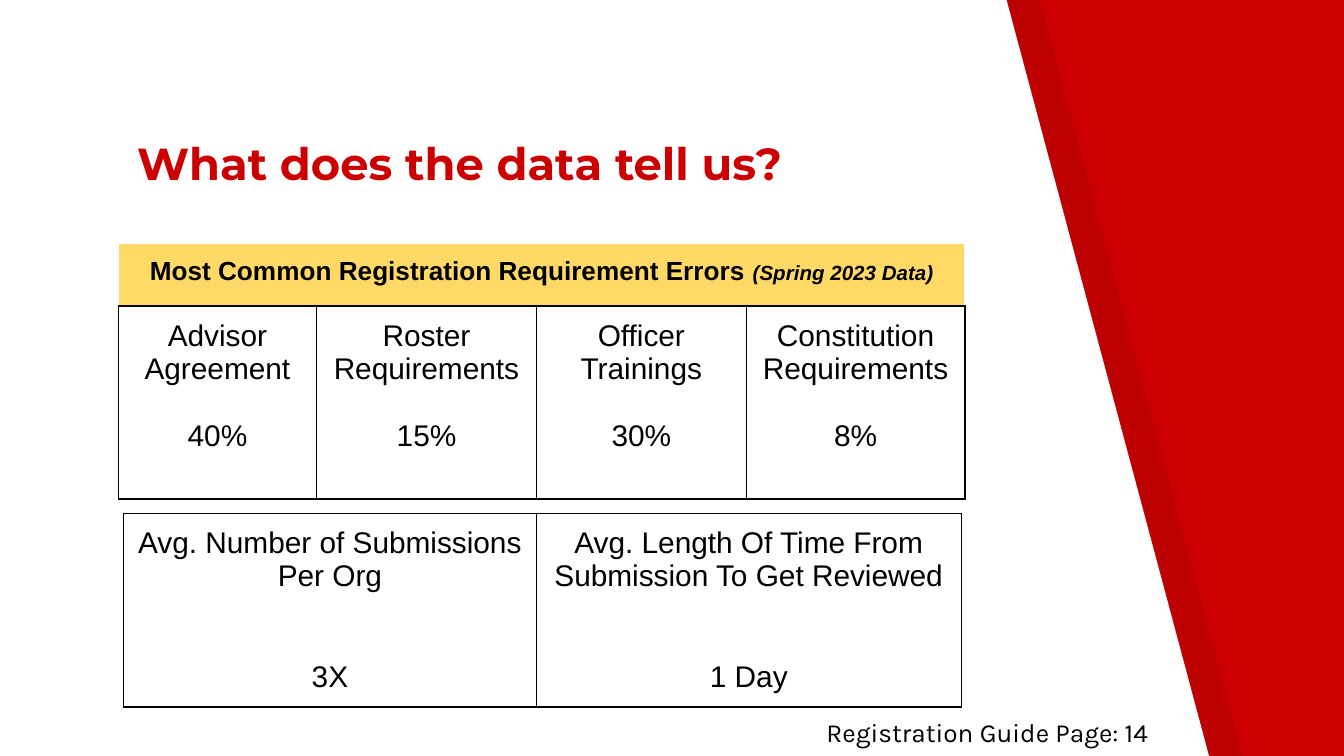
from pptx import Presentation
from pptx.dml.color import RGBColor as RGB
from pptx.enum.text import MSO_ANCHOR as Anchor, MSO_AUTO_SIZE as Fit, PP_ALIGN as Align
from pptx.oxml import parse_xml
from pptx.oxml.ns import nsdecls, qn
from pptx.util import Pt
from lxml.etree import SubElement as Sub

RED = RGB(0xCC, 0x00, 0x00)
GOLD = RGB(0xFF, 0xD9, 0x66)
WHITE = RGB(0xFF, 0xFF, 0xFF)
BLACK = RGB(0x00, 0x00, 0x00)
INSET = 7.2


def style(run, size, color=BLACK, face="Arial", bold=False, slant=False):
    font = run.font
    font.name, font.size = face, Pt(size)
    font.bold, font.italic = bold, slant
    font.color.rgb = color


def pad(part):
    part.margin_left = part.margin_right = Pt(INSET)
    part.margin_top = part.margin_bottom = Pt(INSET)


def panel(slide, box, color, alpha=None):
    left, top, width, height = box
    right, base = left + width, top + height
    pen = slide.shapes.build_freeform(Pt(left), Pt(top))
    pen.add_line_segments([(Pt(x), Pt(y)) for x, y in (
        (left, base), (right, base), (right - 108.72, 0))])
    shape = pen.convert_to_shape()
    shape.shadow.inherit = False
    shape.line.fill.background()
    shape.fill.solid()
    shape.fill.fore_color.rgb = color
    if alpha:
        tint = shape.fill._xPr.find(".//" + qn("a:srgbClr"))
        Sub(tint, qn("a:alpha")).set("val", str(alpha * 1000))


def title(slide, box, text):
    shape = slide.shapes.title
    slide.shapes._spTree.append(shape._element)
    shape.left, shape.top, shape.width, shape.height = map(Pt, box)
    frame = shape.text_frame
    frame.text = text
    frame.auto_size = Fit.NONE
    frame.vertical_anchor = Anchor.BOTTOM
    pad(frame)
    frame.paragraphs[0].alignment = Align.LEFT
    style(frame.paragraphs[0].runs[0], 24, RED, "Montserrat", True)


def edge(cell, sides, color):
    for side in sides:
        cell._tc.get_or_add_tcPr().append(parse_xml(
            f'<a:ln{side} {nsdecls("a")} w="9525"><a:solidFill>'
            f'<a:srgbClr val="{color}"/></a:solidFill></a:ln{side}>'))


def fact(cell, label, value, gap):
    pad(cell)
    frame = cell.text_frame
    frame.text = label
    last = frame.add_paragraph()
    last.text = value
    last.space_before = Pt(gap)
    for para in frame.paragraphs:
        para.alignment = Align.CENTER
        style(para.runs[0], 16)
    edge(cell, "LRTB", BLACK)
    cell.fill.background()


def header(table, parts):
    last = len(table.columns) - 1
    cell = table.cell(0, 0)
    cell.merge(table.cell(0, last))
    pad(cell)
    para = cell.text_frame.paragraphs[0]
    para.alignment = Align.CENTER
    for text, size, slant in parts:
        run = para.add_run()
        run.text = text
        style(run, size, bold=True, slant=slant)
    for col in range(last + 1):
        part = table.cell(0, col)
        edge(part, "LRT", WHITE)
        edge(part, "B", BLACK)
        part.fill.solid()
        part.fill.fore_color.rgb = GOLD


def grid(slide, spot, cols, rows, facts, gap, head=None):
    shape = slide.shapes.add_table(
        len(rows), len(cols), *map(Pt, (*spot, sum(cols), sum(rows))))
    table = shape.table
    table.first_row = table.horz_banding = False
    for col, width in zip(table.columns, cols):
        col.width = Pt(width)
    for row, height in zip(table.rows, rows):
        row.height = Pt(height)
    if head:
        header(table, head)
    for col, (label, value) in enumerate(facts):
        fact(table.cell(len(rows) - 1, col), label, value, gap)


def footer(slide, box, text):
    frame = slide.shapes.add_textbox(*map(Pt, box)).text_frame
    frame.word_wrap = True
    pad(frame)
    frame.text = text
    style(frame.paragraphs[0].runs[0], 14, face="Karla")


def main():
    deck = Presentation()
    deck.slide_width, deck.slide_height = Pt(720), Pt(405)
    slide = deck.slides.add_slide(deck.slide_layouts[5])
    back = slide.background.fill
    back.solid()
    back.fore_color.rgb = RED

    panel(slide, (18, -0.72, 648, 406.8), BLACK, 7)
    panel(slide, (0, -0.72, 648, 406.8), WHITE)
    title(slide, (66.24, 70.56, 419, 38.2), "What does the data tell us?")
    grid(slide, (63.5, 130.5), (106, 118, 112.3, 117.2), (33.5, 103.4), (
        ("Advisor Agreement", "40%"),
        ("Roster Requirements", "15%"),
        ("Officer Trainings", "30%"),
        ("Constitution Requirements", "8%"),
    ), 18, (
        ("Most Common Registration Requirement Errors ", 14, False),
        ("(Spring 2023 Data)", 11, True),
    ))
    left = 66.24
    for width, *pair in (
        (221, "Avg. Number of Submissions Per Org", "3X"),
        (227.8, "Avg. Length Of Time From Submission To Get Reviewed", "1 Day"),
    ):
        grid(slide, (left, 275), (width,), (103,), [pair], 36)
        left += width
    footer(slide, (435.6, 376.5, 203, 23), "Registration Guide Page: 14")
    deck.save("out.pptx")


if __name__ == "__main__":
    main()
